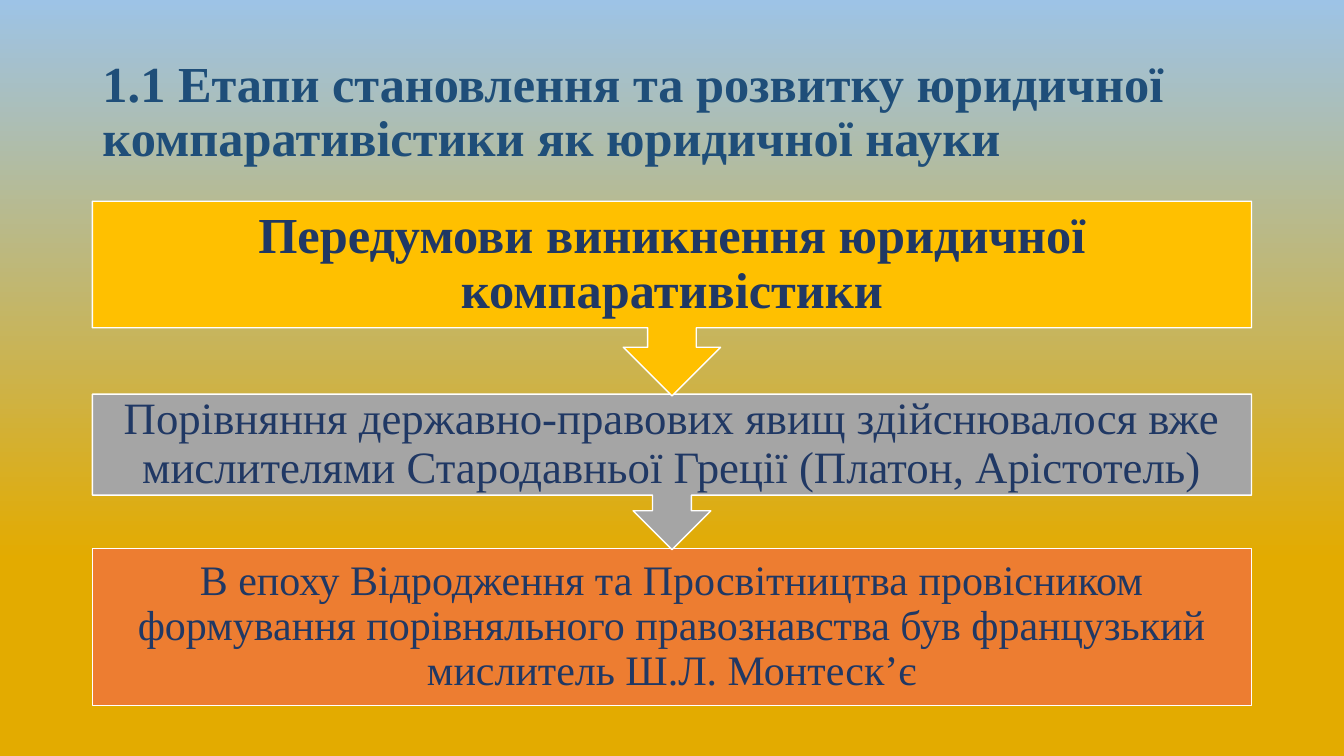
from pptx import Presentation
from pptx.dml.color import RGBColor
from pptx.enum import shapes, text
from pptx.util import Pt

COLORS = {
    "sky": "9DC3E6", "wheat": "E3AB00", "heading": "1F4E79", "ink": "203864",
    "edge": "FFFFFF", "gold": "FFC000", "gray": "A5A5A5", "orange": "ED7D31",
}
LEFT, WIDTH = 66, 828


def color(name):
    return RGBColor.from_string(COLORS[name])


def write(frame, words, size, ink, align, bold=False):
    """Fill a text frame with one formatted, vertically centred paragraph."""
    frame.text = words
    frame.word_wrap = True
    frame.auto_size = text.MSO_AUTO_SIZE.NONE
    frame.vertical_anchor = text.MSO_ANCHOR.MIDDLE
    paragraph = frame.paragraphs[0]
    paragraph.alignment = align
    paragraph.line_spacing = 0.9
    font = paragraph.runs[0].font
    font.name = "Times New Roman"
    font.size = Pt(size)
    font.bold = bold
    font.color.rgb = color(ink)


prs = Presentation()
prs.slide_width, prs.slide_height = Pt(960), Pt(540)
slide = prs.slides.add_slide(prs.slide_layouts[5])

# Background: wheat at the bottom, sky at the top
backdrop = slide.background.fill
backdrop.gradient()
backdrop.gradient_angle = 90
for stop, (position, name) in zip(backdrop.gradient_stops, [(0.26, "wheat"), (1, "sky")]):
    stop.position = position
    stop.color.rgb = color(name)

title = slide.shapes.title
title.left, title.top, title.width, title.height = Pt(LEFT), Pt(28.8), Pt(WIDTH), Pt(104.4)
write(title.text_frame,
      "1.1 Етапи становлення та розвитку юридичної компаративістики як юридичної науки",
      36, "heading", text.PP_ALIGN.LEFT, bold=True)

# Stages from the last to the first, so that each arrow tip lies over the next box
CALLOUT = shapes.MSO_SHAPE.DOWN_ARROW_CALLOUT
stages = [
    (shapes.MSO_SHAPE.RECTANGLE, 391.7, 112.3, "orange", 30, False,
     "В епоху Відродження та Просвітництва провісником формування порівняльного "
     "правознавства був французький мислитель Ш.Л. Монтеск’є"),
    (CALLOUT, 281.6, 111, "gray", 32, False,
     "Порівняння державно-правових явищ здійснювалося вже мислителями "
     "Стародавньої Греції (Платон, Арістотель)"),
    (CALLOUT, 143.8, 139, "gold", 36, True,
     "Передумови виникнення юридичної компаративістики"),
]
for kind, top, height, fill, size, bold, words in stages:
    stage = slide.shapes.add_shape(kind, Pt(LEFT), Pt(top), Pt(WIDTH), Pt(height))
    stage.shadow.inherit = False
    stage.fill.solid()
    stage.fill.fore_color.rgb = color(fill)
    stage.line.color.rgb = color("edge")
    stage.line.width = Pt(1)
    frame = stage.text_frame
    frame.margin_left = frame.margin_right = Pt(18)
    frame.margin_top = frame.margin_bottom = 0
    write(frame, words, size, "ink", text.PP_ALIGN.CENTER, bold)

prs.save("out.pptx")
